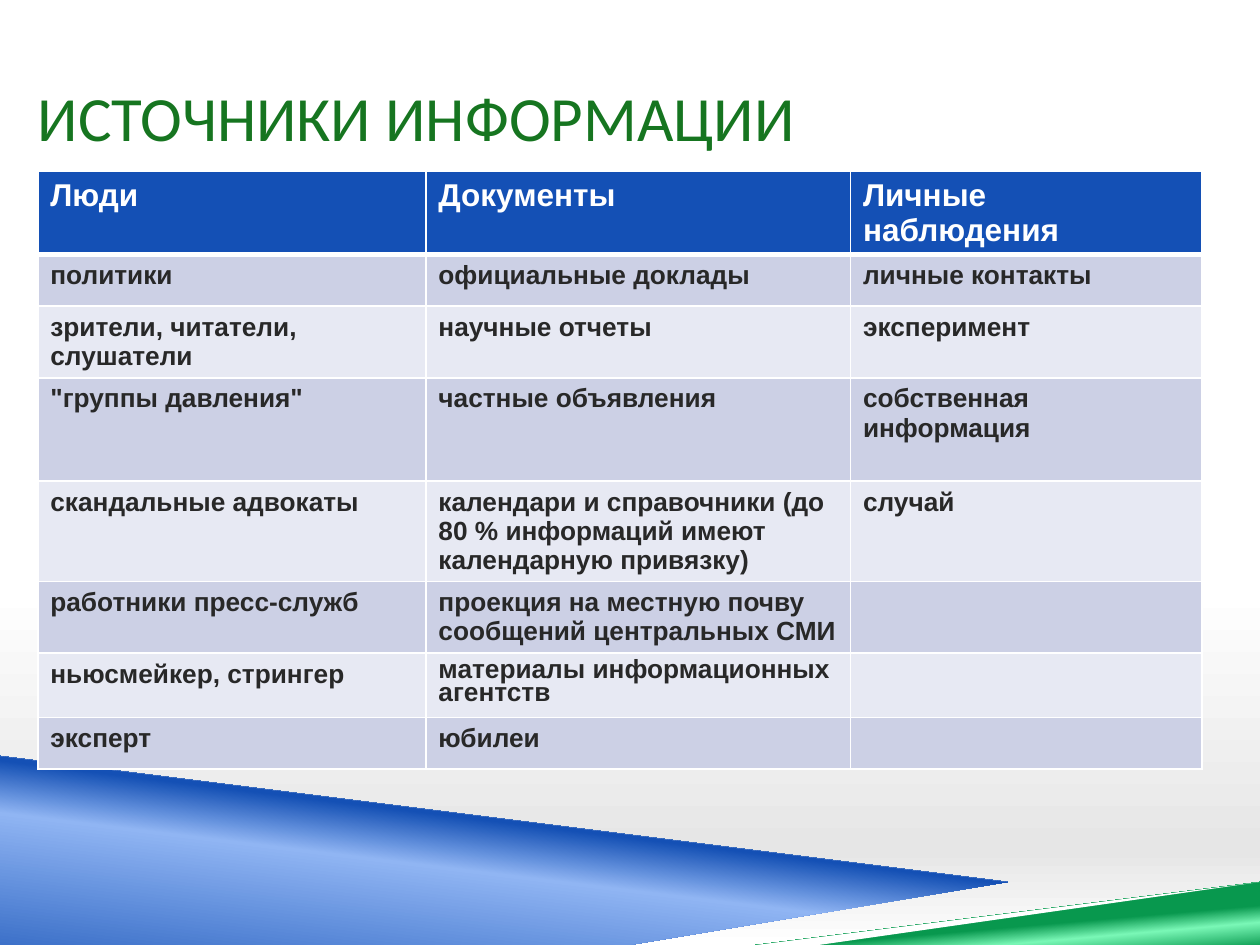
"""Build the slide on sources of information, with a table over sloping bands."""
from typing import NamedTuple

import pptx
import pptx.dml.color
import pptx.enum.text
import pptx.oxml
import pptx.oxml.ns
import pptx.util
from pptx.dml.color import RGBColor
from pptx.util import Inches

WHITE = RGBColor(0xFF, 0xFF, 0xFF)
GREY = RGBColor(0xE6, 0xE6, 0xE6)
BLUE = RGBColor(0x14, 0x50, 0xB5)
LIGHT_BLUE = RGBColor(0x90, 0xB5, 0xF3)
GREEN = RGBColor(0x08, 0x98, 0x4E)
LIGHT_GREEN = RGBColor(0x7A, 0xF8, 0xB7)
TITLE_GREEN = RGBColor(0x16, 0x75, 0x20)
TEXT = RGBColor(0x28, 0x28, 0x28)
BAND_FILLS = (RGBColor(0xE7, 0xE9, 0xF3), RGBColor(0xCC, 0xD0, 0xE5))


class Band(NamedTuple):
    points: list[tuple[float, float]]
    stops: list[tuple[int, RGBColor]]
    angle: int = 0


class Row(NamedTuple):
    height: float
    texts: tuple[str, str, str]


BANDS = [
    Band([(0, 5.97), (7.92, 6.92), (2, 7.5), (0, 7.5)],
         [(0, BLUE), (52, LIGHT_BLUE), (66, BLUE)], 277),
    Band([(1.98, 7.5), (10, 6.72), (10, 7.5)],
         [(28, GREEN), (40, LIGHT_GREEN), (48, GREEN)], 265),
    Band([(0, 5.92), (0, 6), (7.9, 6.93), (8.32, 6.9)], [(0, WHITE)]),
    Band([(10, 6.69), (1.84, 7.5), (2.66, 7.5), (10, 6.77)], [(0, WHITE)]),
]
COLUMNS = (3.08, 3.37, 2.79)
ROWS = [
    Row(0.65, ("Люди", "Документы", "Личные наблюдения")),
    Row(0.41, ("политики", "официальные доклады", "личные контакты")),
    Row(0.57, ("зрители, читатели, слушатели", "научные отчеты", "эксперимент")),
    Row(0.82, ('"группы давления"', "частные объявления", "собственная информация")),
    Row(0.79, ("скандальные адвокаты",
               "календари и справочники (до 80 % информаций имеют календарную привязку)",
               "случай")),
    Row(0.57, ("работники пресс-служб",
               "проекция на местную почву сообщений центральных СМИ", "")),
    Row(0.51, ("ньюсмейкер, стрингер", "материалы информационных агентств", "")),
    Row(0.41, ("эксперт", "юбилеи", "")),
]
TIGHT_TEXT = "материалы информационных агентств"


def set_gradient(fill, element, stops: list[tuple[int, RGBColor]], angle: int) -> None:
    fill.gradient()
    fill.gradient_angle = 360 - angle
    gs_list = element.find(".//" + pptx.oxml.ns.qn("a:gsLst"))
    for gs in list(gs_list):
        gs_list.remove(gs)
    for position, color in stops:
        gs_list.append(pptx.oxml.parse_xml(
            f'<a:gs {pptx.oxml.ns.nsdecls("a")} pos="{position * 1000}">'
            f'<a:srgbClr val="{color}"/></a:gs>'))


def add_band(s, band: Band) -> None:
    builder = s.shapes.build_freeform(*band.points[0], scale=Inches(1))
    builder.add_line_segments(band.points[1:], close=True)
    sp = builder.convert_to_shape()
    sp.shadow.inherit = False
    sp.line.fill.background()
    if len(band.stops) == 1:
        sp.fill.solid()
        sp.fill.fore_color.rgb = band.stops[0][1]
    else:
        set_gradient(sp.fill, sp.element, band.stops, band.angle)


def add_run(p, text: str, font: str, size: int, color: RGBColor, bold: bool) -> None:
    r = p.add_run()
    r.text = text
    r.font.name = font
    r.font.size = pptx.util.Pt(size)
    r.font.color.rgb = color
    r.font.bold = bold


def set_borders(cell, bottom: int) -> None:
    tc_pr = cell._tc.get_or_add_tcPr()
    for side, width in (("L", 1), ("R", 1), ("T", 1), ("B", bottom)):
        tc_pr.append(pptx.oxml.parse_xml(
            f'<a:ln{side} {pptx.oxml.ns.nsdecls("a")} w="{pptx.util.Pt(width)}">'
            f'<a:solidFill><a:srgbClr val="{WHITE}"/></a:solidFill></a:ln{side}>'))


def add_source_table(s) -> None:
    table = s.shapes.add_table(
        len(ROWS), len(COLUMNS), Inches(0.3), Inches(1.36),
        Inches(sum(COLUMNS)), Inches(sum(row.height for row in ROWS))).table
    for column, width in zip(table.columns, COLUMNS):
        column.width = Inches(width)
    for i, row in enumerate(ROWS):
        table.rows[i].height = Inches(row.height)
        header = i == 0
        for j, text in enumerate(row.texts):
            cell = table.cell(i, j)
            set_borders(cell, 3 if header else 1)
            cell.fill.solid()
            cell.fill.fore_color.rgb = BLUE if header else BAND_FILLS[i % 2]
            p = cell.text_frame.paragraphs[0]
            if text == TIGHT_TEXT:
                p.line_spacing = 0.8
            if text:
                add_run(p, text, "Arial", 18 if header else 15,
                        WHITE if header else TEXT, True)


def add_title(s, text: str) -> None:
    sp = s.shapes.title
    sp.left, sp.top, sp.width, sp.height = map(Inches, (0.3, 0.3, 8.95, 1.25))
    tf = sp.text_frame
    tf.word_wrap = True
    tf.vertical_anchor = pptx.enum.text.MSO_ANCHOR.MIDDLE
    tf.margin_left = tf.margin_right = 0
    p = tf.paragraphs[0]
    p.alignment = pptx.enum.text.PP_ALIGN.LEFT
    add_run(p, text, "Calibri", 36, TITLE_GREEN, False)


def main() -> None:
    prs = pptx.Presentation()
    prs.slide_width, prs.slide_height = Inches(10), Inches(7.5)
    s = prs.slides.add_slide(prs.slide_layouts[5])
    set_gradient(s.background.fill, s.element,
                 [(0, WHITE), (62, WHITE), (90, GREY), (100, WHITE)], 90)
    for band in BANDS:
        add_band(s, band)
    add_title(s, "ИСТОЧНИКИ ИНФОРМАЦИИ")
    add_source_table(s)
    prs.save("out.pptx")


if __name__ == "__main__":
    main()
